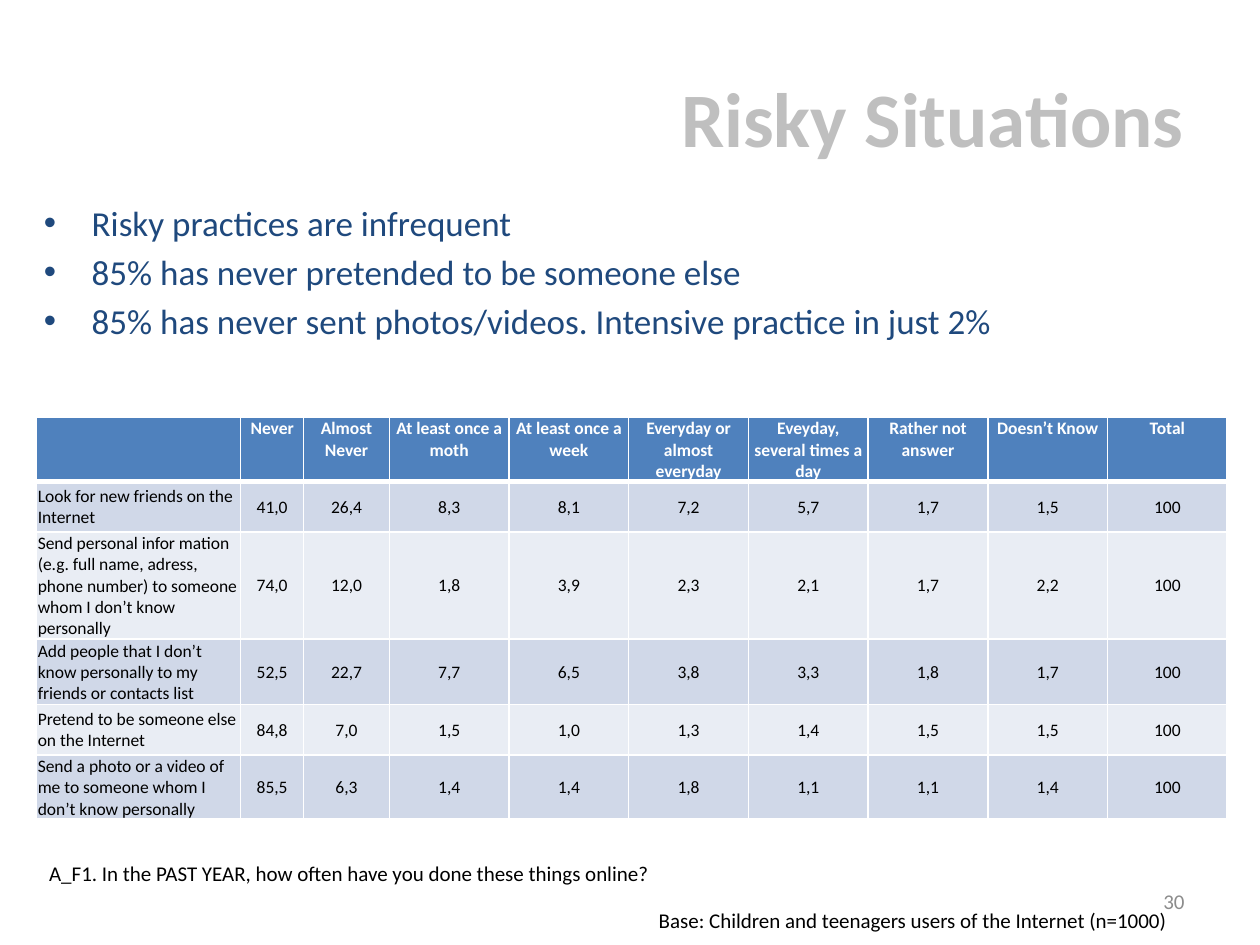
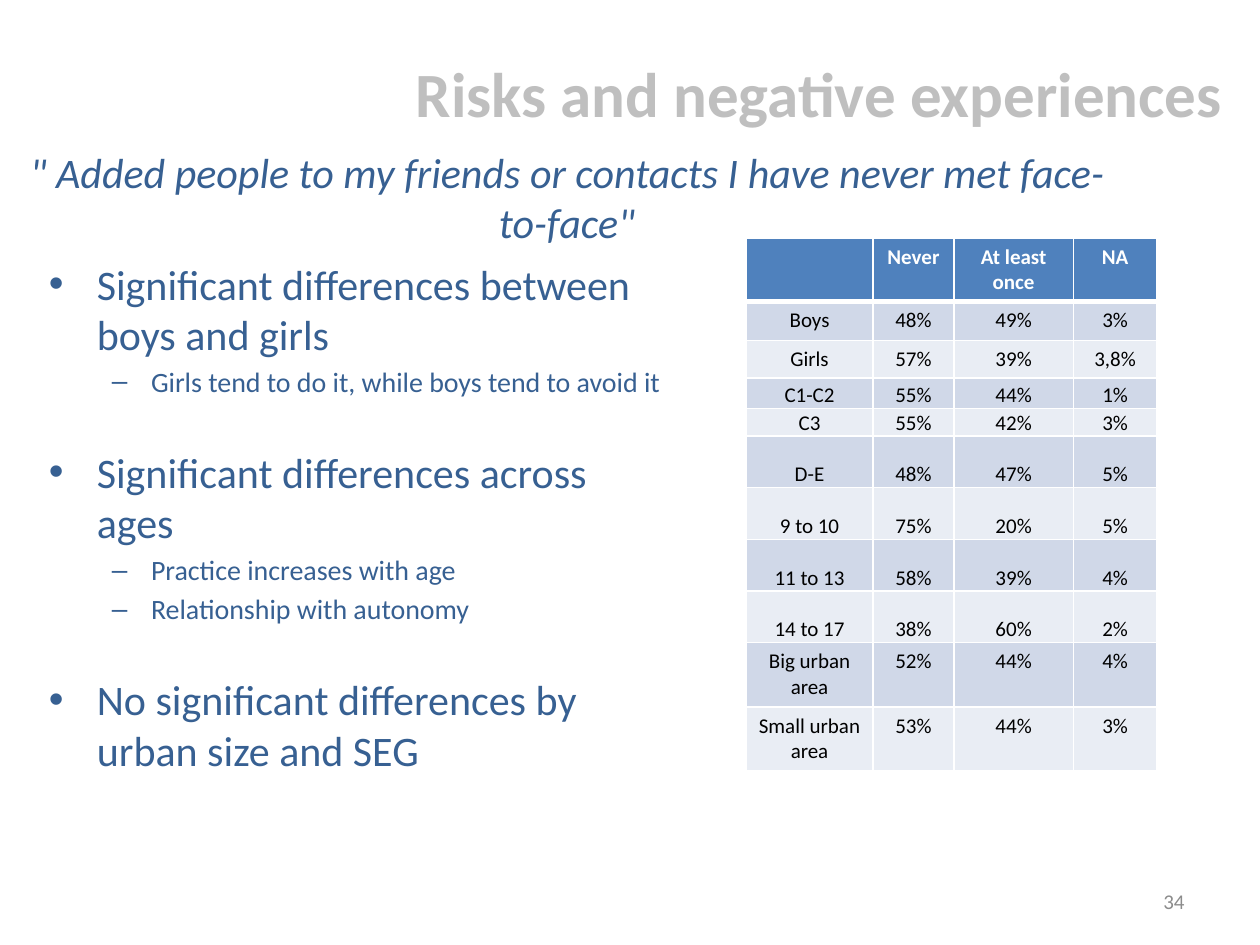
from dataclasses import dataclass
from typing import NamedTuple

from lxml.etree import SubElement
from pptx import Presentation
from pptx.dml.color import RGBColor
from pptx.enum.text import MSO_ANCHOR as Anchor, PP_ALIGN as Align
from pptx.oxml import parse_xml
from pptx.oxml.ns import nsdecls, qn
from pptx.util import Inches, Pt


@dataclass(frozen=True)
class Theme:
    font: str = "Calibri"
    title: str = "BFBFBF"
    navy: str = "1F497D"
    blue: str = "376092"
    ink: str = "000000"
    white: str = "FFFFFF"
    page_number: str = "8C8C8C"
    header: str = "4F81BD"
    bands: tuple[str, str] = ("D0D8E8", "E9EDF4")
    note_size: float = 12
    quote_size: float = 24
    rule: float = 1
    header_rule: float = 3


THEME = Theme()


class Frame(NamedTuple):
    left: float
    top: float
    width: float
    height: float


class Style(NamedTuple):
    size: float
    color: str
    bold: bool = False
    italic: bool = False


class Level(NamedTuple):
    size: float
    mark: str
    indent: float
    hanging: float


class Bullet(NamedTuple):
    text: str
    level: Level
    starts_group: bool = False


class Row(NamedTuple):
    height: float
    cells: list[str]
    anchor: Anchor = Anchor.TOP
    tight: bool = False


POINT = Level(20, "•", 0.38, 0.38)
TOPIC = Level(24, "•", 0.38, 0.38)
DETAIL = Level(16, "–", 0.81, 0.31)
GROUP_GAP = 27.5

PRACTICE_BULLETS = [
    Bullet("Risky practices are infrequent", POINT),
    Bullet("85% has never pretended to be someone else", POINT),
    Bullet("85% has never sent photos/videos. Intensive practice in just 2%", POINT),
]

CONTACT_BULLETS = [
    Bullet("Significant differences between boys and girls", TOPIC),
    Bullet("Girls tend to do it, while boys tend to avoid it", DETAIL),
    Bullet("Significant differences across ages", TOPIC, True),
    Bullet("Practice increases with age", DETAIL),
    Bullet("Relationship with autonomy", DETAIL),
    Bullet("No significant differences by urban size and SEG", TOPIC, True),
]


def practice_row(height: float, practice: str, shares: str) -> Row:
    return Row(height, [practice, *shares.split(), "100"], Anchor.MIDDLE, True)


PRACTICE_ROWS = [
    Row(0.51, ["", "Never", "Almost Never", "At least once a moth", "At least once a week",
               "Everyday or almost everyday", "Eveyday, several times a day",
               "Rather not answer", "Doesn’t Know", "Total"], tight=True),
    practice_row(0.4, "Look for new friends on the Internet",
                 "41,0 26,4 8,3 8,1 7,2 5,7 1,7 1,5"),
    practice_row(0.85, "Send personal infor mation (e.g. full name, adress, phone number) "
                 "to someone whom I don’t know personally",
                 "74,0 12,0 1,8 3,9 2,3 2,1 1,7 2,2"),
    practice_row(0.52, "Add people that I don’t know personally to my friends or contacts list",
                 "52,5 22,7 7,7 6,5 3,8 3,3 1,8 1,7"),
    practice_row(0.4, "Pretend to be someone else on the Internet",
                 "84,8 7,0 1,5 1,0 1,3 1,4 1,5 1,5"),
    practice_row(0.51, "Send a photo or a video of me to someone whom I don’t know personally",
                 "85,5 6,3 1,4 1,4 1,8 1,1 1,1 1,4"),
]

CONTACT_ROWS = [
    Row(0.5, ["", "Never", "At least once", "NA"]),
    Row(0.31, ["Boys", "48%", "49%", "3%"]),
    Row(0.3, ["Girls", "57%", "39%", "3,8%"]),
    Row(0.24, ["C1-C2", "55%", "44%", "1%"], Anchor.BOTTOM, True),
    Row(0.22, ["C3", "55%", "42%", "3%"], Anchor.BOTTOM, True),
    Row(0.41, ["D-E", "48%", "47%", "5%"], Anchor.BOTTOM, True),
    Row(0.41, ["9 to 10", "75%", "20%", "5%"], Anchor.BOTTOM, True),
    Row(0.41, ["11 to 13", "58%", "39%", "4%"], Anchor.BOTTOM, True),
    Row(0.41, ["14 to 17", "38%", "60%", "2%"], Anchor.BOTTOM, True),
    Row(0.51, ["Big urban area", "52%", "44%", "4%"]),
    Row(0.51, ["Small urban area", "53%", "44%", "3%"]),
]


def format_para(para, style: Style, align: Align = Align.LEFT) -> None:
    para.alignment = align
    for font in [para.font, *(span.font for span in para.runs)]:
        font.name = THEME.font
        font.size = Pt(style.size)
        font.bold = style.bold
        font.italic = style.italic
        font.color.rgb = RGBColor.from_string(style.color)


def add_box(slide, frame: Frame, anchor: Anchor = Anchor.TOP, wrap: bool = True):
    text_frame = slide.shapes.add_textbox(*map(Inches, frame)).text_frame
    text_frame.word_wrap = wrap
    text_frame.vertical_anchor = anchor
    return text_frame


def add_text(slide, frame: Frame, text: str, style: Style, align: Align = Align.LEFT,
             anchor: Anchor = Anchor.TOP, wrap: bool = True):
    text_frame = add_box(slide, frame, anchor, wrap)
    text_frame.text = text
    format_para(text_frame.paragraphs[0], style, align)
    return text_frame


def add_title(slide, frame: Frame, text: str, size: float) -> None:
    add_text(slide, frame, text, Style(size, THEME.title, bold=True), Align.RIGHT, Anchor.MIDDLE)


def add_page_number(slide, number: int) -> None:
    add_text(slide, Frame(7.17, 6.95, 2.33, 0.4), str(number),
             Style(THEME.note_size, THEME.page_number), Align.RIGHT, Anchor.MIDDLE)


def add_bullets(slide, frame: Frame, bullets: list[Bullet], color: str) -> None:
    text_frame = add_box(slide, frame)
    for index, bullet in enumerate(bullets):
        para = text_frame.add_paragraph() if index else text_frame.paragraphs[0]
        level = bullet.level
        para.text = bullet.text
        format_para(para, Style(level.size, color))
        para.space_before = Pt(GROUP_GAP if bullet.starts_group else 0.2 * level.size)
        properties = para._p.get_or_add_pPr()
        properties.set("marL", str(Inches(level.indent)))
        properties.set("indent", str(-Inches(level.hanging)))
        font = SubElement(properties, qn("a:buFont"), typeface="Arial")
        mark = SubElement(properties, qn("a:buChar"), char=level.mark)
        defaults = properties.find(qn("a:defRPr"))
        if defaults is not None:
            defaults.addprevious(font)
            defaults.addprevious(mark)


def set_borders(cell, top: float, bottom: float) -> None:
    widths = {"lnL": THEME.rule, "lnR": THEME.rule, "lnT": top, "lnB": bottom}
    properties = cell._tc.get_or_add_tcPr()
    for index, (side, width) in enumerate(widths.items()):
        properties.insert(index, parse_xml(
            f'<a:{side} {nsdecls("a")} w="{Pt(width)}"><a:solidFill>'
            f'<a:srgbClr val="{THEME.white}"/></a:solidFill></a:{side}>'))


def fill_cell(cell, text: str, row: Row, row_index: int, size: float, align: Align) -> None:
    is_header = row_index == 0
    cell.text = text
    cell.vertical_anchor = row.anchor
    if row.tight:
        cell.margin_left = cell.margin_right = cell.margin_top = Inches(0.01)
        cell.margin_bottom = 0
    format_para(cell.text_frame.paragraphs[0],
                Style(size, THEME.white if is_header else THEME.ink, bold=is_header), align)
    cell.fill.solid()
    cell.fill.fore_color.rgb = RGBColor.from_string(
        THEME.header if is_header else THEME.bands[(row_index - 1) % 2])
    set_borders(cell, top=THEME.header_rule if row_index == 1 else THEME.rule,
                bottom=THEME.header_rule if is_header else THEME.rule)


def add_grid(slide, left: float, top: float, widths: list[float], rows: list[Row],
             size: float, label_align: Align) -> None:
    """Draw a banded table whose first row is the header and first column the labels."""
    frame = Frame(left, top, sum(widths), sum(row.height for row in rows))
    table = slide.shapes.add_table(len(rows), len(widths), *map(Inches, frame)).table
    for column, width in zip(table.columns, widths):
        column.width = Inches(width)
    for row_index, row in enumerate(rows):
        table.rows[row_index].height = Inches(row.height)
        for column_index, text in enumerate(row.cells):
            is_label = row_index > 0 and column_index == 0
            fill_cell(table.cell(row_index, column_index), text, row, row_index, size,
                      label_align if is_label else Align.CENTER)


def build_risky_situations(slide) -> None:
    note = Style(THEME.note_size, THEME.ink)
    add_title(slide, Frame(0.5, 0.3, 9, 1.25), "Risky Situations", 44)
    add_bullets(slide, Frame(0.25, 1.55, 9.47, 1.88), PRACTICE_BULLETS, THEME.navy)
    question = add_text(slide, Frame(0.25, 6.78, 6.96, 0.3),
                        "A_F1. In the PAST YEAR, how often have you done these things online?",
                        note)
    question.margin_left = Inches(0.14)
    add_grid(slide, 0.29, 3.31, [1.62, 0.5, 0.68] + [0.95] * 7, PRACTICE_ROWS, 10, Align.LEFT)
    add_page_number(slide, 30)
    add_text(slide, Frame(5.13, 7.15, 4.27, 0.3),
             "Base: Children and teenagers users of the Internet (n=1000)", note, wrap=False)


def build_negative_experiences(slide) -> None:
    quote = add_text(slide, Frame(0, 0.8, 9, 0.96),
                     '" Added people to my friends or contacts I have never met face-to-face"',
                     Style(THEME.quote_size, THEME.blue, italic=True), Align.CENTER)
    quote.margin_top = Inches(0.36)
    quote.margin_bottom = 0
    add_bullets(slide, Frame(0.29, 2, 5.09, 4.95), CONTACT_BULLETS, THEME.blue)
    add_page_number(slide, 34)
    add_title(slide, Frame(3.03, 0.19, 6.77, 1.09), "Risks and negative experiences", 36)
    add_grid(slide, 5.92, 1.89, [1.01, 0.64, 0.95, 0.66], CONTACT_ROWS, 12, Align.CENTER)


def main() -> None:
    deck = Presentation()
    deck.slide_width, deck.slide_height = Inches(10), Inches(7.5)
    blank = deck.slide_layouts[6]
    for build in (build_risky_situations, build_negative_experiences):
        build(deck.slides.add_slide(blank))
    deck.save("out.pptx")


if __name__ == "__main__":
    main()
